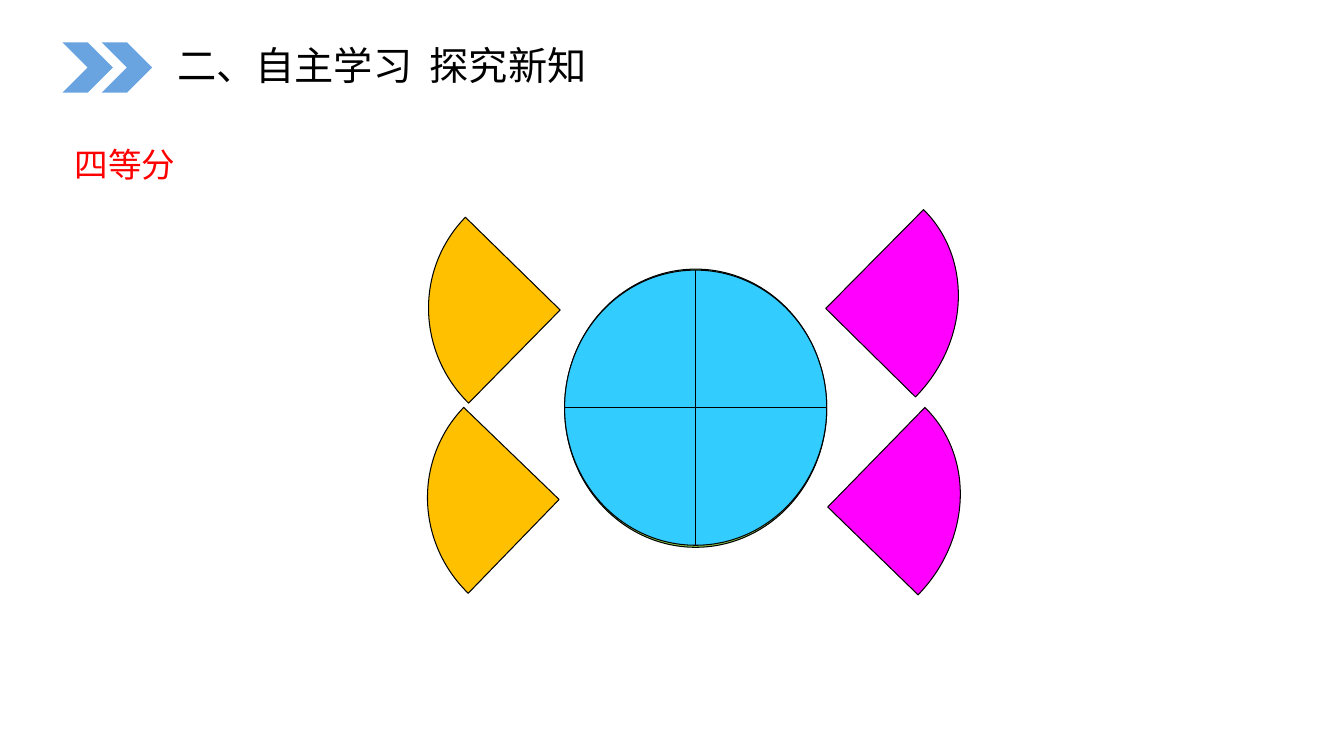
from pptx import Presentation
from pptx.dml.color import RGBColor
from pptx.enum.shapes import MSO_SHAPE as Preset
from pptx.enum.text import MSO_ANCHOR as Anchor
from pptx.util import Inches, Pt

COLORS = {
    "chevron": "69A4E1", "title": "000000", "label": "FF0000", "outline": "000000",
    "under": "92D050", "circle": "33CCFF", "right": "FF00FF", "left": "FFC000",
}
QUARTER = 53.94  # end angle of the wedge, just under 90 degrees


def paint(slide, preset, box, color, outlined=True):
    shape = slide.shapes.add_shape(preset, *map(Inches, box))
    shape.shadow.inherit = False
    shape.fill.solid()
    shape.fill.fore_color.rgb = RGBColor.from_string(COLORS[color])
    if outlined:
        shape.line.color.rgb = RGBColor.from_string(COLORS["outline"])
        shape.line.width = Pt(0.75)
    else:
        shape.line.fill.background()
    return shape


def write(slide, box, text, size, color, **para_format):
    frame = slide.shapes.add_textbox(*map(Inches, box)).text_frame
    frame.word_wrap = True
    frame.vertical_anchor = Anchor.MIDDLE
    para = frame.paragraphs[0]
    for name, value in para_format.items():
        setattr(para, name, value)
    span = para.add_run()
    span.text = text
    for name, value in {"name": "Arial", "size": Pt(size)}.items():
        setattr(span.font, name, value)
    span.font.color.rgb = RGBColor.from_string(COLORS[color])


def add_header(slide, left, top):
    """Two chevrons followed by the section title."""
    for step in range(2):
        paint(slide, Preset.CHEVRON, (left + 0.39 * step, top, 0.5, 0.5),
              "chevron", outlined=False)
    write(slide, (left + 1.04, top + 0.02, 5.59, 0.46),
          "二、自主学习  探究新知", 28, "title", line_spacing=0.9)


def add_wedge_pair(slide, left, top, size, drop, shift, turn, color):
    """Two quarter wedges, one above the other; the lower is shifted sideways."""
    for row in (1, 0):
        box = (left + shift * row, top + drop * row, *size)
        wedge = paint(slide, Preset.PIE, box, color)
        wedge.adjustments[0] = 0
        wedge.adjustments[1] = QUARTER
        wedge.rotation = turn - 0.4 * row


def add_quartered_circle(slide, left, top):
    """A circle cut in four, with its quarters laid out on both sides."""
    paint(slide, Preset.OVAL, (left, top, 2.6, 2.76), "under")
    add_wedge_pair(slide, left + 1.21, top - 0.86, (2.76, 2.5), 1.97, 0.02, 314.7, "right")
    add_wedge_pair(slide, left - 1.34, top - 0.91, (2.59, 2.63), 1.88, -0.01, 134.5, "left")
    paint(slide, Preset.FLOWCHART_OR, (left, top + 0.01, 2.6, 2.73), "circle")


def main():
    deck = Presentation()
    deck.slide_width, deck.slide_height = Inches(13.33), Inches(7.5)
    page = deck.slides.add_slide(deck.slide_layouts[6])
    add_header(page, 0.62, 0.42)
    write(page, (0.64, 1.38, 2.2, 0.5), "四等分", 24, "label")
    add_quartered_circle(page, 5.6, 2.67)
    deck.save("out.pptx")


if __name__ == "__main__":
    main()
